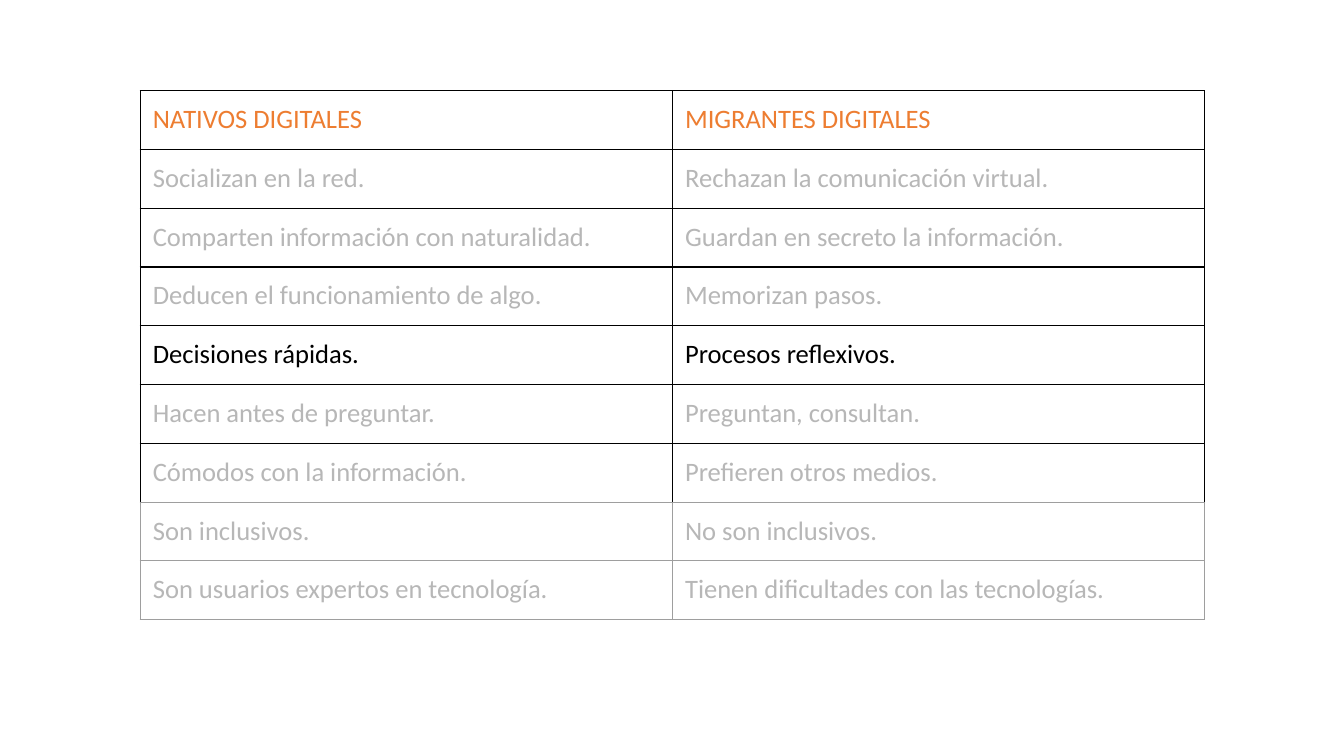
from dataclasses import dataclass

from lxml.etree import SubElement
from pptx import Presentation
from pptx.dml.color import RGBColor
from pptx.oxml.ns import qn
from pptx.table import _Cell as Cell
from pptx.util import Pt

ORANGE, GRAY, BLACK, LINE_GRAY = "ED7D31", "B7B7B7", "000000", "9E9E9E"
LEFT, TOP, COL_W, ROW_H, INSET = 100.1, 64.8, 380.2, 42, 9.1


@dataclass
class Row:
    native: str
    migrant: str
    color: str = GRAY
    line: str = BLACK
    line_w: float = 1
    bottom: str = ""  # set where the bottom line differs from the others


ROWS = [
    Row("NATIVOS DIGITALES", "MIGRANTES DIGITALES", color=ORANGE),
    Row("Socializan en la red.", "Rechazan la comunicación virtual."),
    Row("Comparten información con naturalidad.", "Guardan en secreto la información."),
    Row("Deducen el funcionamiento de algo.", "Memorizan pasos."),
    Row("Decisiones rápidas.", "Procesos reflexivos.", color=BLACK),
    Row("Hacen antes de preguntar.", "Preguntan, consultan."),
    Row("Cómodos con la información.", "Prefieren otros medios.", bottom=LINE_GRAY),
    Row("Son inclusivos.", "No son inclusivos.", line=LINE_GRAY, line_w=0.75),
    Row("Son usuarios expertos en tecnología.", "Tienen dificultades con las tecnologías.",
        line=LINE_GRAY, line_w=0.75),
]


def rgb(color: str) -> RGBColor:
    return RGBColor.from_string(color)


def write(cell: Cell, text: str, *, color: str, size: float = 19, font: str = "Calibri") -> None:
    r = cell.text_frame.paragraphs[0].add_run()
    r.text = text
    r.font.name, r.font.size, r.font.bold = font, Pt(size), False
    r.font.color.rgb = rgb(color)


def add_border(cell: Cell, side: str, color: str, width: float) -> None:
    tc_pr = cell._tc.get_or_add_tcPr()
    ln = SubElement(tc_pr, qn(f"a:ln{side}"), w=str(Pt(width)))
    fill = SubElement(ln, qn("a:solidFill"))
    SubElement(fill, qn("a:srgbClr"), val=color)


def style_cell(cell: Cell, row: Row) -> None:
    cell.margin_left = cell.margin_right = cell.margin_top = cell.margin_bottom = Pt(INSET)
    for side in "LRTB":
        if side == "B" and row.bottom:
            add_border(cell, side, row.bottom, 0.75)
        else:
            add_border(cell, side, row.line, row.line_w)
    cell.fill.background()  # the fill has to follow the borders


def main() -> None:
    prs = Presentation()
    prs.slide_width, prs.slide_height = Pt(960), Pt(540)
    s = prs.slides.add_slide(prs.slide_layouts[6])

    # Comparison table
    table = s.shapes.add_table(len(ROWS), 2, Pt(LEFT), Pt(TOP),
                               Pt(2 * COL_W), Pt(len(ROWS) * ROW_H)).table
    table.first_row = table.horz_banding = False
    for col in table.columns:
        col.width = Pt(COL_W)

    # Cells
    for i, row in enumerate(ROWS):
        table.rows[i].height = Pt(ROW_H)
        for j, text in enumerate((row.native, row.migrant)):
            cell = table.cell(i, j)
            style_cell(cell, row)
            write(cell, text, color=row.color)

    prs.save("out.pptx")


if __name__ == "__main__":
    main()
